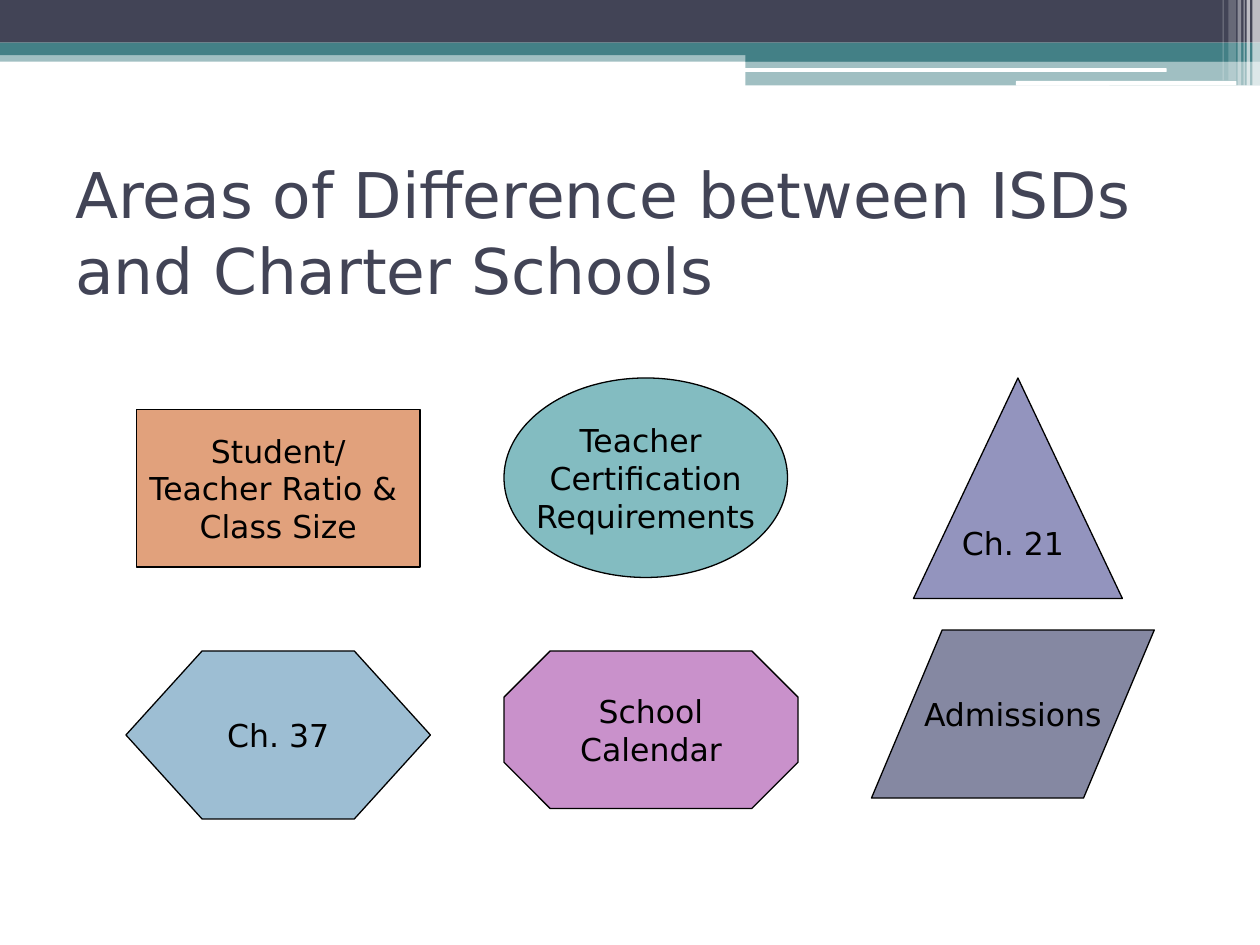
from pptx import Presentation
from pptx.util import Pt
from pptx.dml.color import RGBColor
from pptx.enum.shapes import MSO_SHAPE as SHAPE
from pptx.enum.text import MSO_ANCHOR as ANCHOR, PP_ALIGN as ALIGN
from pptx.oxml.ns import qn
from lxml import etree

FONT = "DejaVu Sans"
NAVY, TEAL, WHITE, BLACK = "424456", "438086", "FFFFFF", "000000"


def color(value):
    return RGBColor.from_string(value)


def add_filled(kind, x, y, w, h, fill, opacity=100):
    sp = s.shapes.add_shape(kind, Pt(x), Pt(y), Pt(w), Pt(h))
    sp.shadow.inherit = False
    sp.fill.solid()
    sp.fill.fore_color.rgb = color(fill)
    sp.line.fill.background()
    if opacity < 100:
        clr = sp.fill._xPr.find(".//" + qn("a:srgbClr"))
        etree.SubElement(clr, qn("a:alpha"), val=str(opacity * 1000))
    return sp


prs = Presentation()
prs.slide_width, prs.slide_height = Pt(720), Pt(540)
s = prs.slides.add_slide(prs.slide_layouts[6])

# Header bands: x, y, width, height, colour, opacity
bands = [
    (0, 28.8, 720, 6.5, TEAL, 50),
    (0, 0, 720, 24.4, NAVY, 100),
    (0, 24.4, 720, 7.1, TEAL, 100),
    (426, 28.2, 294, 7.1, TEAL, 100),
    (426, 34.8, 294, 14, TEAL, 50),
]
for *box, fill, opacity in bands:
    add_filled(SHAPE.RECTANGLE, *box, fill, opacity)

# White rounded bars across the header
for box in [(425.5, 39, 241.2, 2.1), (580.5, 46.3, 126, 2.6)]:
    add_filled(SHAPE.ROUNDED_RECTANGLE, *box, WHITE)

# Translucent stripes at the right edge: x, width, height, opacity
stripes = [
    (715.7, 4.3, 49, 65),
    (712.3, 2, 49, 65),
    (710.6, 0.7, 49, 60),
    (707.2, 2, 49, 40),
    (702, 4.3, 46, 20),
    (698.6, 0.7, 46, 30),
]
for x, w, h, opacity in stripes:
    add_filled(SHAPE.RECTANGLE, x, 0, w, h, WHITE, opacity)

# Title
tf = s.shapes.add_textbox(Pt(36), Pt(90), Pt(648), Pt(84)).text_frame
tf.word_wrap = True
tf.vertical_anchor = ANCHOR.MIDDLE
p = tf.paragraphs[0]
p.text = "Areas of Difference between ISDs and Charter Schools"
p.font.name, p.font.size = FONT, Pt(36)
p.font.color.rgb = color(NAVY)

# Areas of difference: shape, x, y, width, height, colour, adjustment, lines
areas = [
    (SHAPE.RECTANGLE, 78, 234, 162, 90, "E1A17C", None,
     ["Student/", "Teacher Ratio & ", "Class Size"]),
    (SHAPE.OVAL, 288, 216, 162, 114, "83BCC1", None,
     ["Teacher ", "Certification", "Requirements"]),
    (SHAPE.ISOSCELES_TRIANGLE, 522, 216, 119.4, 126, "9394BE", 0.5, ["Ch. 21 "]),
    (SHAPE.HEXAGON, 72, 372, 174, 96, "9DBED3", 0.453, ["Ch. 37"]),
    (SHAPE.OCTAGON, 288, 372, 168, 90, "C991CB", 0.293, ["School", "Calendar"]),
    (SHAPE.PARALLELOGRAM, 498, 360, 161.6, 96, "8588A2", 0.421, ["Admissions"]),
]
for kind, x, y, w, h, fill, adjustment, lines in areas:
    sp = add_filled(kind, x, y, w, h, fill)
    sp.line.color.rgb = color(BLACK)
    sp.line.width = Pt(0.75)
    if adjustment is not None:
        sp.adjustments[0] = adjustment
    tf = sp.text_frame
    tf.word_wrap = False
    tf.vertical_anchor = ANCHOR.MIDDLE
    tf.text = "\n".join(lines)
    for p in tf.paragraphs:
        p.alignment = ALIGN.CENTER
        p.font.name, p.font.size = FONT, Pt(18)
        p.font.color.rgb = color(BLACK)

prs.save("out.pptx")
